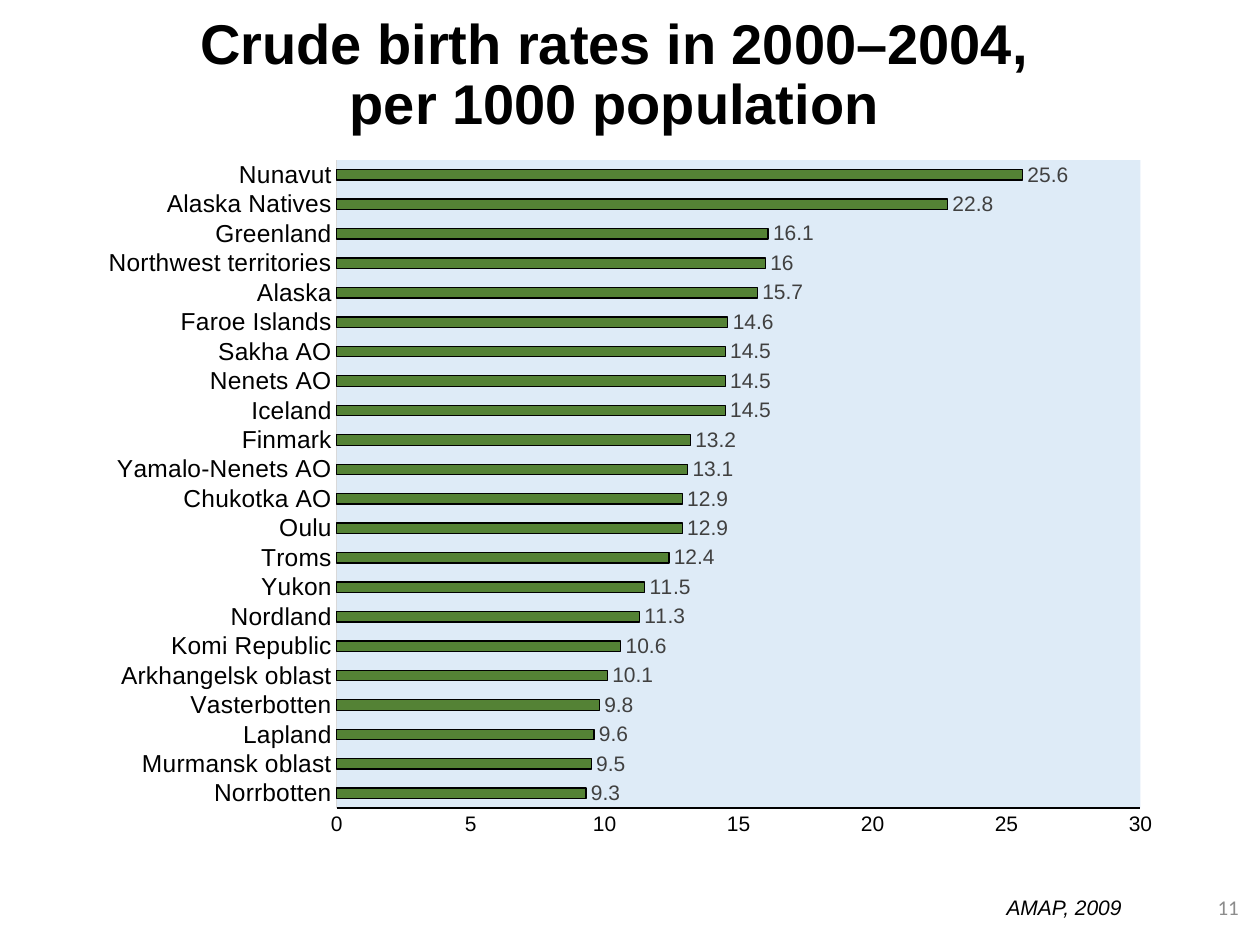
from typing import NamedTuple

from lxml import etree
from pptx import Presentation
from pptx.chart.data import CategoryChartData
from pptx.dml.color import RGBColor
from pptx.enum.chart import XL_CHART_TYPE as ChartType
from pptx.enum.chart import XL_LABEL_POSITION as LabelPos
from pptx.enum.chart import XL_TICK_MARK as Tick
from pptx.enum.text import MSO_ANCHOR as Anchor
from pptx.enum.text import MSO_AUTO_SIZE as AutoSize
from pptx.enum.text import PP_ALIGN as Align
from pptx.oxml import parse_xml
from pptx.oxml.ns import nsdecls, qn
from pptx.util import Inches, Pt

BLACK = RGBColor(0x00, 0x00, 0x00)
GREEN = RGBColor(0x54, 0x82, 0x35)
PALE_BLUE = RGBColor(0xDE, 0xEB, 0xF7)
DARK_GREY = RGBColor(0x40, 0x40, 0x40)
MID_GREY = RGBColor(0x8C, 0x8C, 0x8C)
LIGHT_GREY = RGBColor(0xD9, 0xD9, 0xD9)


class Rate(NamedTuple):
    region: str
    births: float


class Box(NamedTuple):
    left: float
    top: float
    width: float
    height: float

    def lengths(self) -> list:
        return [Inches(v) for v in self]


class Caption(NamedTuple):
    text: str
    box: Box
    font: str
    color: RGBColor
    italic: bool
    align: Align
    anchor: Anchor
    wrap: bool


RATES = [
    Rate("Norrbotten", 9.3),
    Rate("Murmansk oblast", 9.5),
    Rate("Lapland", 9.6),
    Rate("Vasterbotten", 9.8),
    Rate("Arkhangelsk oblast", 10.1),
    Rate("Komi Republic", 10.6),
    Rate("Nordland", 11.3),
    Rate("Yukon", 11.5),
    Rate("Troms", 12.4),
    Rate("Oulu", 12.9),
    Rate("Chukotka AO", 12.9),
    Rate("Yamalo-Nenets AO", 13.1),
    Rate("Finmark", 13.2),
    Rate("Iceland", 14.5),
    Rate("Nenets AO", 14.5),
    Rate("Sakha AO", 14.5),
    Rate("Faroe Islands", 14.6),
    Rate("Alaska", 15.7),
    Rate("Northwest territories", 16),
    Rate("Greenland", 16.1),
    Rate("Alaska Natives", 22.8),
    Rate("Nunavut", 25.6),
]

CAPTIONS = [
    Caption("AMAP, 2009", Box(7.89, 7.05, 1.14, 0.3), "Arial", BLACK, True,
            Align.LEFT, Anchor.TOP, False),
    Caption("11", Box(7.68, 7, 2.25, 0.4), "Calibri", MID_GREY, False,
            Align.RIGHT, Anchor.MIDDLE, True),
]


def style_font(font, name: str, size: float, color: RGBColor) -> None:
    font.name = name
    font.size = Pt(size)
    font.color.rgb = color


def style_line(line, color: RGBColor) -> None:
    line.color.rgb = color
    line.width = Pt(0.75)


def add_title(s, text: str, box: Box) -> None:
    title = s.shapes.title
    title.left, title.top, title.width, title.height = box.lengths()
    tf = title.text_frame
    tf.auto_size = AutoSize.NONE
    tf.vertical_anchor = Anchor.MIDDLE
    p = tf.paragraphs[0]
    p.text = text
    p.alignment = Align.CENTER
    p.line_spacing = 0.9
    for r in p.runs:
        style_font(r.font, "Arial", 32, BLACK)
        r.font.bold = True


def add_caption(s, caption: Caption) -> None:
    tf = s.shapes.add_textbox(*caption.box.lengths()).text_frame
    tf.word_wrap = caption.wrap
    tf.vertical_anchor = caption.anchor
    p = tf.paragraphs[0]
    p.text = caption.text
    p.alignment = caption.align
    font = p.runs[0].font
    style_font(font, caption.font, 12, caption.color)
    font.italic = caption.italic


def format_plot_area(chart, inner: Box, fill: RGBColor) -> None:
    area = chart._chartSpace.chart.plotArea
    for old in area.findall(qn("c:layout")):
        area.remove(old)
    layout = parse_xml(f"<c:layout {nsdecls('c')}><c:manualLayout/></c:layout>")
    settings = [("layoutTarget", "inner"), ("xMode", "edge"), ("yMode", "edge"),
                *zip("xywh", inner)]
    for tag, value in settings:
        etree.SubElement(layout[0], qn(f"c:{tag}")).set("val", str(value))
    area.insert(0, layout)
    area.append(parse_xml(
        f"<c:spPr {nsdecls('c', 'a')}><a:solidFill>"
        f'<a:srgbClr val="{fill}"/></a:solidFill></c:spPr>'))


def add_rate_chart(s, rates: list[Rate], box: Box) -> None:
    data = CategoryChartData()
    data.categories = [rate.region for rate in rates]
    data.add_series("Series 1", [rate.births for rate in rates])
    chart = s.shapes.add_chart(ChartType.BAR_CLUSTERED, *box.lengths(), data).chart
    chart.has_legend = False
    chart.has_title = False
    style_font(chart.font, "Calibri", 10, BLACK)

    axes = [(chart.category_axis, 14, LIGHT_GREY), (chart.value_axis, 12, BLACK)]
    for axis, size, line_color in axes:
        axis.major_tick_mark = axis.minor_tick_mark = Tick.NONE
        axis.has_major_gridlines = False
        style_font(axis.tick_labels.font, "Arial", size, BLACK)
        style_line(axis.format.line, line_color)
    chart.value_axis.minimum_scale = 0
    chart.value_axis.maximum_scale = 30
    chart.value_axis.major_unit = 5

    plot = chart.plots[0]
    plot.gap_width = 182
    plot.vary_by_categories = False
    series = plot.series[0]
    series.format.fill.solid()
    series.format.fill.fore_color.rgb = GREEN
    style_line(series.format.line, BLACK)
    labels = series.data_labels
    labels.show_value = True
    labels.position = LabelPos.OUTSIDE_END
    style_font(labels.font, "Arial", 12, DARK_GREY)
    format_plot_area(chart, Box(0.23, 0.02, 0.74, 0.92), PALE_BLUE)


def main() -> None:
    prs = Presentation()
    prs.slide_width, prs.slide_height = Inches(10), Inches(7.5)
    s = prs.slides.add_slide(prs.slide_layouts[5])
    add_title(s, "Crude birth rates in 2000–2004, \vper 1000 population ",
              Box(0.12, 0.19, 9.64, 0.83))
    add_rate_chart(s, RATES, Box(0.69, 1.16, 8.62, 5.59))
    for caption in CAPTIONS:
        add_caption(s, caption)
    prs.save("out.pptx")


if __name__ == "__main__":
    main()
